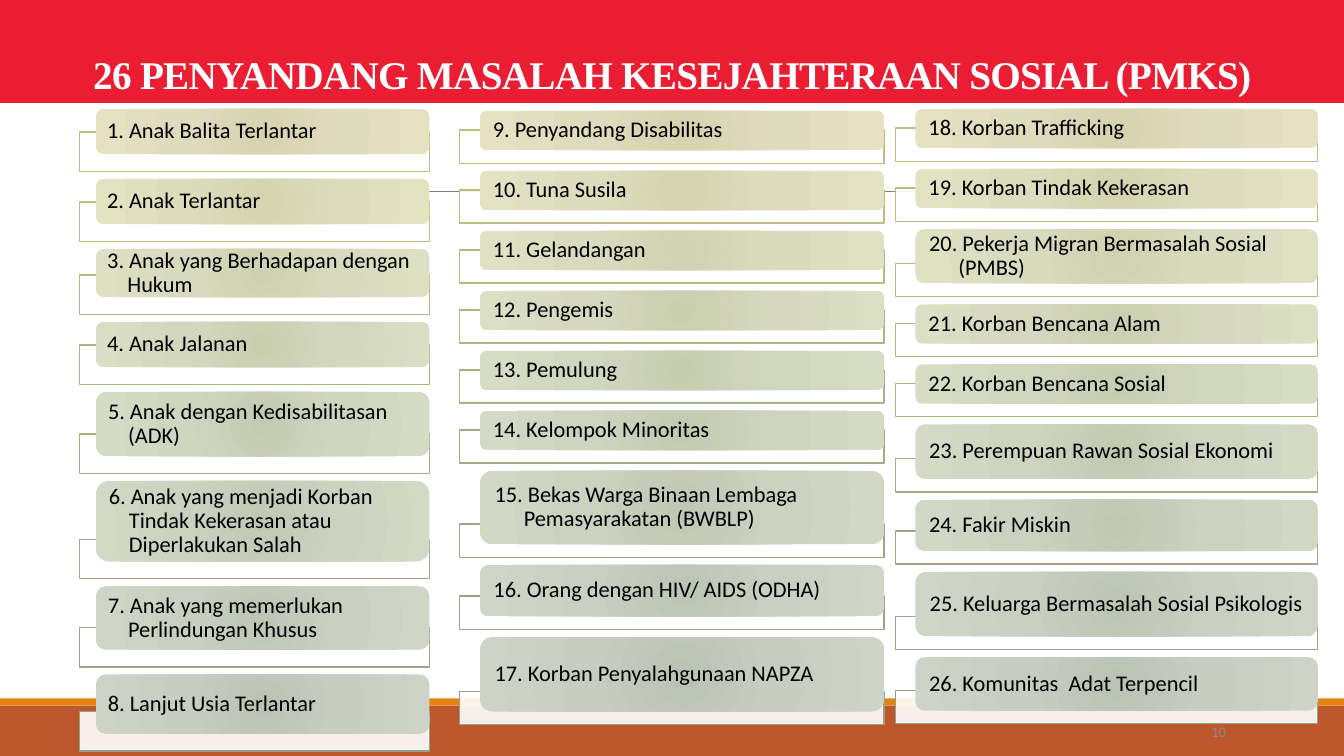
from lxml import etree
from pptx import Presentation
from pptx import util as u
from pptx.dml.color import RGBColor
from pptx.enum import shapes, text
from pptx.oxml import parse_xml
from pptx.oxml.ns import qn

COLOURS = {
    "white": "FFFFFF",
    "black": "000000",
    "title_band": "EB1D33",
    "footer": "BD582C",
    "footer_edge": "E48312",
    "rule": "808080",
    "page_number": "8C8C8C",
    "eight_steps": [
        "C2BC80 D7D3AF DFDBBD E5E1C1", "BEBD81 D4D4AF DCDCBD E3E3C2",
        "B5B982 CED1B0 D7DABE DEE0C3", "ACB483 C9CEB1 D3D7BE D9DEC4",
        "A5AF84 C5CBB2 CFD5BF D5DBC5", "9EAA85 C1C8B3 CCD2C0 D2D9C5",
        "98A586 BEC6B4 C9D0C1 CFD6C6", "94A088 BBC3B5 C7CDC1 CDD4C7",
    ],
    "nine_steps": [
        "C2BC80 D7D3AF DFDBBD E5E1C1", "BEBD81 D4D4AF DDDCBD E3E2C2",
        "B7BA81 D0D2B0 D9DBBE DFE1C3", "AFB682 CBCFB1 D5D8BE DBDFC3",
        "A8B283 C7CDB1 D1D6BF D7DCC4", "A2AD84 C3CAB2 CED4BF D4DAC5",
        "9DA985 C0C8B3 CBD2C0 D1D8C6", "98A587 BDC5B4 C9CFC1 CFD6C7",
        "94A088 BBC3B5 C7CDC1 CDD4C7",
    ],
}

COLUMNS = [
    {"left": 0.79, "width": 3.47, "top": 1.08, "bottom": 7.28, "indent": 0.16,
     "frame_height": 0.39, "overlap": 0.22, "margin": 0.09, "hanging": 0.2,
     "ramp": "eight_steps", "items": [
         ("1. Anak Balita Terlantar", 0.45),
         ("2. Anak Terlantar", 0.45),
         ("3. Anak yang Berhadapan dengan Hukum", 0.48),
         ("4. Anak Jalanan", 0.45),
         ("5. Anak dengan Kedisabilitasan (ADK)", 0.64),
         ("6. Anak yang menjadi Korban Tindak Kekerasan atau Diperlakukan Salah", 0.8),
         ("7. Anak yang memerlukan Perlindungan Khusus", 0.63),
         ("8. Lanjut Usia Terlantar", 0.59)]},
    {"left": 4.56, "width": 4.21, "top": 1.1, "bottom": 7.06, "indent": 0.2,
     "frame_height": 0.33, "overlap": 0.2, "margin": 0.11, "hanging": 0.29,
     "ramp": "nine_steps", "items": [
         ("9. Penyandang Disabilitas", 0.39),
         ("10. Tuna Susila", 0.39),
         ("11. Gelandangan", 0.39),
         ("12. Pengemis", 0.39),
         ("13. Pemulung", 0.39),
         ("14. Kelompok Minoritas", 0.39),
         ("15. Bekas Warga Binaan Lembaga  Pemasyarakatan (BWBLP)", 0.73),
         ("16. Orang dengan HIV/ AIDS (ODHA)", 0.51),
         ("17. Korban Penyalahgunaan NAPZA", 0.74)]},
    {"left": 8.88, "width": 4.19, "top": 1.08, "bottom": 7.05, "indent": 0.2,
     "frame_height": 0.33, "overlap": 0.2, "margin": 0.11, "hanging": 0.29,
     "ramp": "nine_steps", "items": [
         ("18. Korban Trafficking", 0.39),
         ("19. Korban Tindak Kekerasan", 0.39),
         ("20. Pekerja Migran Bermasalah Sosial (PMBS)", 0.54),
         ("21. Korban Bencana Alam", 0.39),
         ("22. Korban Bencana Sosial", 0.39),
         ("23. Perempuan Rawan Sosial Ekonomi", 0.54),
         ("24. Fakir Miskin", 0.51),
         ("25. Keluarga Bermasalah Sosial Psikologis", 0.64),
         ("26. Komunitas  Adat Terpencil", 0.53)]},
]


def rgb(value):
    return RGBColor.from_string(value)


def write(box, words, size, font, colour, align, anchor, bold=False):
    frame = box.text_frame
    frame.text = words
    frame.word_wrap = True
    frame.auto_size = text.MSO_AUTO_SIZE.NONE
    frame.vertical_anchor = anchor
    para = frame.paragraphs[0]
    para.alignment = align
    span = para.runs[0]
    span.font.size = u.Pt(size)
    span.font.name = font
    span.font.bold = bold
    span.font.color.rgb = rgb(colour)
    return para


def add_box(parent, kind, left, top, width, height, fill):
    box = parent.shapes.add_shape(kind, *map(u.Inches, (left, top, width, height)))
    box.shadow.inherit = False
    box.line.fill.background()
    box.fill.solid()
    box.fill.fore_color.rgb = rgb(fill)
    return box


def add_title(page, words):
    title = page.shapes.title
    title.left, title.top = u.Inches(0), u.Inches(0)
    title.width, title.height = u.Inches(13.33), u.Inches(1.02)
    title.fill.solid()
    title.fill.fore_color.rgb = rgb(COLOURS["title_band"])
    para = write(title, words, 28, "Times New Roman", COLOURS["white"],
                 text.PP_ALIGN.CENTER, text.MSO_ANCHOR.BOTTOM, True)
    para.line_spacing = 0.85
    para.runs[0].font._element.set("spc", "-50")


def add_rule(page):
    rule = page.shapes.add_connector(shapes.MSO_CONNECTOR.STRAIGHT, u.Inches(1.31),
                                     u.Inches(1.9), u.Inches(12.21), u.Inches(1.9))
    rule.line.color.rgb = rgb(COLOURS["rule"])
    rule.line.width = u.Pt(0.5)
    etree.SubElement(rule._element.spPr, qn("a:effectLst"))


def add_page_number(page, number):
    box = page.shapes.add_textbox(u.Inches(10.83), u.Inches(7.06), u.Inches(1.43), u.Inches(0.4))
    write(box, number, 10.5, "Calibri", COLOURS["page_number"],
          text.PP_ALIGN.RIGHT, text.MSO_ANCHOR.MIDDLE)


def add_frame(group, left, top, width, height, outline):
    frame = add_box(group, shapes.MSO_SHAPE.RECTANGLE, left, top, width, height, COLOURS["white"])
    frame.line.color.rgb = rgb(outline)
    frame.line.width = u.Pt(1)
    colour = frame._element.spPr.find(qn("a:solidFill")).find(qn("a:srgbClr"))
    etree.SubElement(colour, qn("a:alpha")).set("val", "90000")


def radial_fill(box, colours):
    stops = "".join(f'<a:gs pos="{place}"><a:srgbClr val="{colour}"/></a:gs>'
                    for place, colour in zip((0, 45000, 100000), colours))
    gradient = parse_xml(
        '<a:gradFill xmlns:a="http://schemas.openxmlformats.org/drawingml/2006/main" '
        f'rotWithShape="1"><a:gsLst>{stops}</a:gsLst><a:path path="circle">'
        '<a:fillToRect l="100000" t="100000" r="100000" b="100000"/></a:path></a:gradFill>')
    properties = box._element.spPr
    properties.replace(properties.find(qn("a:solidFill")), gradient)


def add_label(group, left, top, width, height, words, colours, column):
    label = add_box(group, shapes.MSO_SHAPE.ROUNDED_RECTANGLE, left, top, width, height, colours[0])
    radial_fill(label, colours)
    para = write(label, words, 16, "Calibri", COLOURS["black"],
                 text.PP_ALIGN.LEFT, text.MSO_ANCHOR.MIDDLE)
    para.line_spacing = 0.9
    hanging = u.Inches(column["hanging"])
    properties = para._p.get_or_add_pPr()
    properties.set("marL", str(hanging))
    properties.set("indent", str(-hanging))
    frame = label.text_frame
    frame.margin_left = frame.margin_right = u.Inches(column["margin"])
    frame.margin_top = frame.margin_bottom = 0


def add_column(page, column):
    group = page.shapes.add_group_shape()
    items = column["items"]
    left, width, indent = column["left"], column["width"], column["indent"]
    top = column["top"]
    filled = sum(height for _, height in items)
    gap = (column["bottom"] - top - filled) / (len(items) - 1)
    for (words, height), step in zip(items, COLOURS[column["ramp"]]):
        outline, *colours = step.split()
        add_frame(group, left, top + height - column["overlap"], width,
                  column["frame_height"], outline)
        add_label(group, left + indent, top, width - indent, height, words, colours, column)
        top += height + gap


def main():
    deck = Presentation()
    deck.slide_width, deck.slide_height = u.Inches(13.33), u.Inches(7.5)
    page = deck.slides.add_slide(deck.slide_layouts[5])
    add_title(page, "26 PENYANDANG MASALAH KESEJAHTERAAN SOSIAL (PMKS)")
    bar = shapes.MSO_SHAPE.RECTANGLE
    add_box(page, bar, 0, 7, 13.33, 0.5, COLOURS["footer"])
    add_box(page, bar, 0, 6.93, 13.33, 0.07, COLOURS["footer_edge"])
    add_rule(page)
    add_page_number(page, "10")
    for column in COLUMNS:
        add_column(page, column)
    deck.save("out.pptx")


if __name__ == "__main__":
    main()
